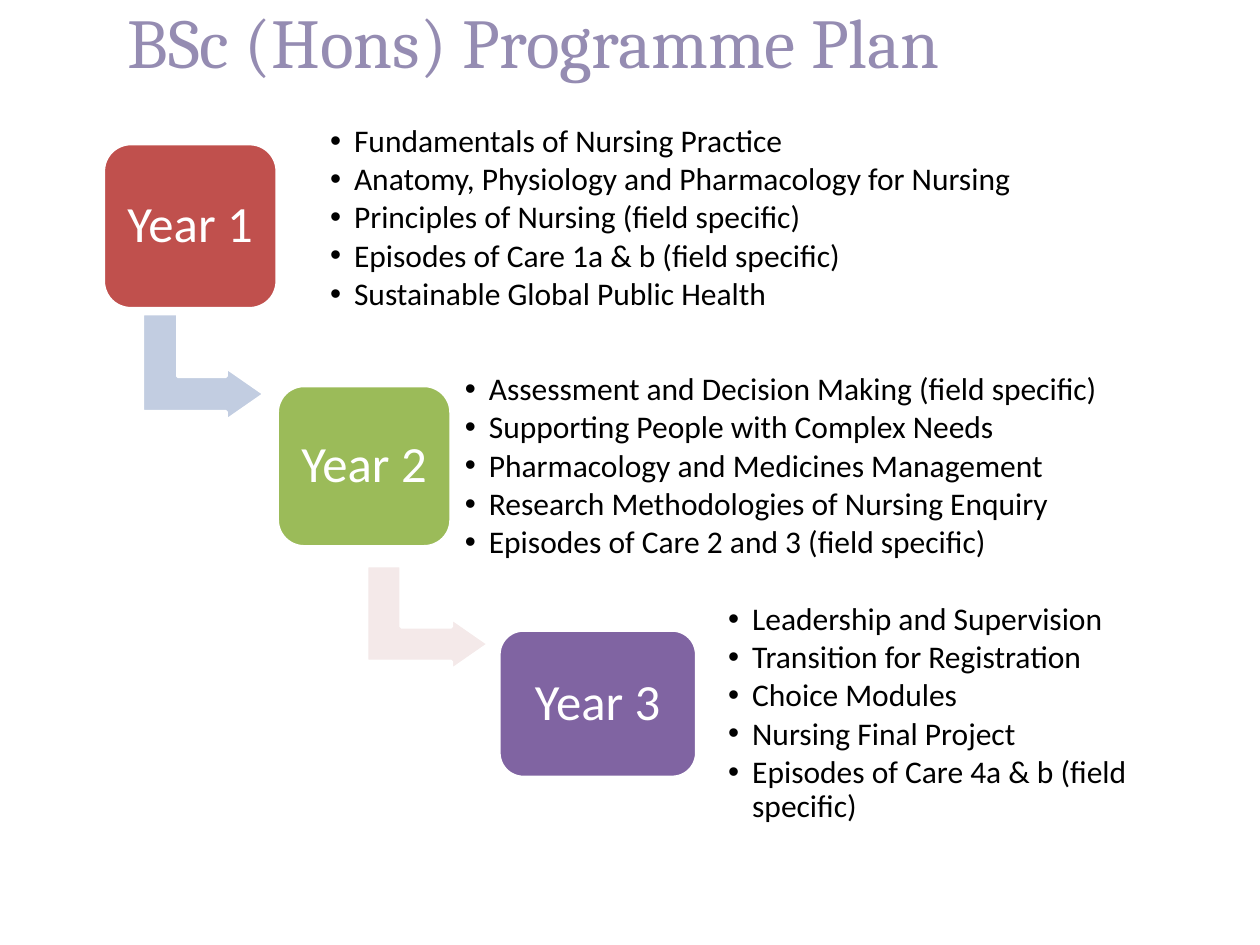
from lxml.etree import SubElement
from pptx import Presentation
from pptx.dml.color import RGBColor
from pptx.enum.shapes import MSO_SHAPE as Shape
from pptx.enum.text import MSO_ANCHOR as Anchor, MSO_AUTO_SIZE as AutoSize, PP_ALIGN as Align
from pptx.oxml.ns import qn
from pptx.util import Inches, Pt

SLIDE_W, SLIDE_H = Inches(10), Inches(7.5)
COLORS = {
    "title": "958CB2", "white": "FFFFFF", "text": "000000",
    "red": "C0504D", "green": "9BBB59", "purple": "8064A2",
    "blue_arrow": "C2CDE1", "pink_arrow": "F4E9E9",
}

# Each step: label, colour, box, module list area, modules, arrow to next step.
# Areas are left, top, width, height in percent of the slide's size.
STEPS = [
    ("Year 1", "red", (8.2, 15.2, 13.8, 17.47), (25.5, 17.07, 57.6, 12.13),
     ["Fundamentals of Nursing Practice",
      "Anatomy, Physiology and Pharmacology for Nursing",
      "Principles of Nursing (field specific)",
      "Episodes of Care 1a & b (field specific)",
      "Sustainable Global Public Health"],
     ("blue_arrow", (11.9, 32.4, 8.5, 12.93))),
    ("Year 2", "green", (22, 40.8, 13.8, 17.07), (36.2, 42.8, 53.6, 13.2),
     ["Assessment and Decision Making (field specific)",
      "Supporting People with Complex Needs",
      "Pharmacology and Medicines Management",
      "Research Methodologies of Nursing Enquiry",
      "Episodes of Care 2 and 3 (field specific)"],
     ("pink_arrow", (29.8, 58.93, 8.3, 12.93))),
    ("Year 3", "purple", (39.6, 66.67, 15.7, 15.6), (57.1, 69.33, 37.4, 12.4),
     ["Leadership and Supervision",
      "Transition for Registration",
      "Choice Modules",
      "Nursing Final Project",
      "Episodes of Care 4a & b (field specific)"],
     None),
]


def rgb(name):
    return RGBColor.from_string(COLORS[name])


def place(area):
    left, top, width, height = area
    return [round(share * size / 100) for share, size in
            ((left, SLIDE_W), (top, SLIDE_H), (width, SLIDE_W), (height, SLIDE_H))]


def set_frame(frame, inset, anchor, wrap=True):
    frame.auto_size = AutoSize.NONE
    frame.word_wrap = wrap
    frame.vertical_anchor = anchor
    frame.margin_left = frame.margin_right = Inches(inset)
    frame.margin_top = frame.margin_bottom = Inches(inset)


def add_run(paragraph, text, font, size, color):
    run = paragraph.add_run()
    run.text = text
    run.font.name, run.font.size = font, Pt(size)
    run.font.color.rgb = rgb(color)


def add_title(slide, text):
    title = slide.shapes.title
    title.left, title.top, title.width, title.height = place((6.7, 0.93, 71.3, 9.47))
    set_frame(title.text_frame, 0, Anchor.TOP)
    paragraph = title.text_frame.paragraphs[0]
    paragraph.alignment = Align.CENTER
    paragraph.line_spacing = Pt(42)
    add_run(paragraph, text, "Cambria", 40, "title")


def add_block(slide, kind, area, color):
    block = slide.shapes.add_shape(kind, *place(area))
    block.shadow.inherit = False
    block.fill.solid()
    block.fill.fore_color.rgb = rgb(color)
    block.line.color.rgb = rgb("white")
    block.line.width = Pt(2)
    return block


def add_year(slide, label, color, area):
    year = add_block(slide, Shape.ROUNDED_RECTANGLE, area, color)
    set_frame(year.text_frame, 0.12, Anchor.MIDDLE, wrap=False)
    paragraph = year.text_frame.paragraphs[0]
    paragraph.alignment = Align.CENTER
    paragraph.line_spacing = 0.9
    add_run(paragraph, label, "Calibri", 29, "white")


def add_arrow(slide, color, area):
    arrow = add_block(slide, Shape.BENT_UP_ARROW, area, color)
    arrow.rotation = 90
    for index, value in enumerate((0.33, 0.25, 0.36)):
        arrow.adjustments[index] = value


def add_bullet(paragraph):
    properties = paragraph._p.get_or_add_pPr()
    properties.set("marL", str(Inches(0.19)))
    properties.set("indent", str(-Inches(0.19)))
    SubElement(properties, qn("a:buFont")).set("typeface", "Arial")
    SubElement(properties, qn("a:buChar")).set("char", "•")


def add_modules(slide, area, modules):
    frame = slide.shapes.add_textbox(*place(area)).text_frame
    set_frame(frame, 0.07, Anchor.MIDDLE)
    for index, module in enumerate(modules):
        paragraph = frame.add_paragraph() if index else frame.paragraphs[0]
        add_bullet(paragraph)
        paragraph.level = 1
        paragraph.line_spacing = 0.9
        paragraph.space_after = Pt(2.4)
        add_run(paragraph, module, "Calibri", 18, "text")


def main():
    prs = Presentation()
    prs.slide_width, prs.slide_height = SLIDE_W, SLIDE_H
    slide = prs.slides.add_slide(prs.slide_layouts[5])
    add_title(slide, "BSc (Hons) Programme Plan")

    # Staircase of years, each with its modules
    for label, color, year_area, list_area, modules, arrow in STEPS:
        if arrow:
            add_arrow(slide, *arrow)
        add_year(slide, label, color, year_area)
        add_modules(slide, list_area, modules)

    prs.save("out.pptx")


if __name__ == "__main__":
    main()
